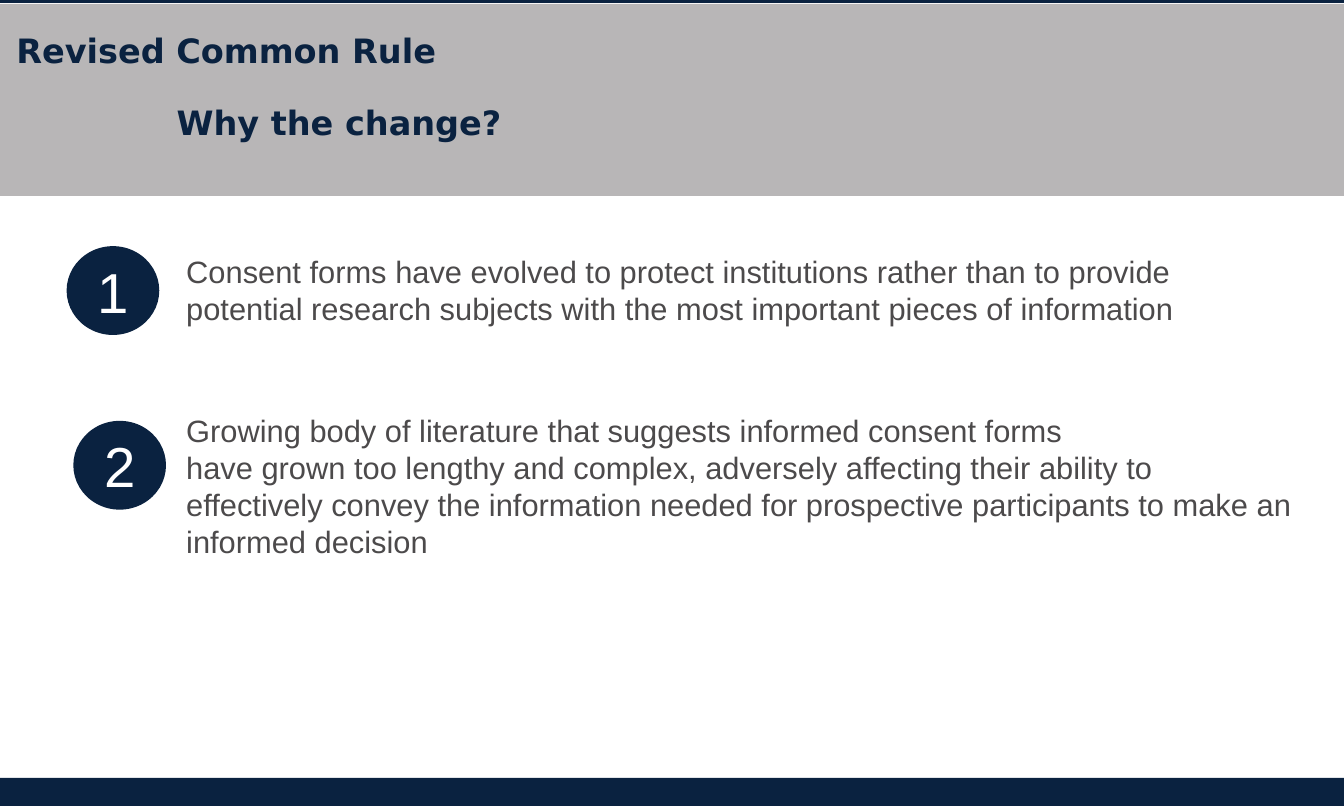
from dataclasses import dataclass

from pptx import Presentation
from pptx.dml.color import RGBColor
from pptx.enum.shapes import MSO_SHAPE
from pptx.enum.text import MSO_ANCHOR, MSO_AUTO_SIZE, PP_ALIGN
from pptx.util import Inches, Pt


@dataclass(frozen=True)
class Theme:
    navy: str = "0A2240"
    grey: str = "B8B6B7"
    ink: str = "4C4A4B"
    white: str = "FFFFFF"
    heading_font: str = "DejaVu Sans"
    body_font: str = "Arial"
    heading_size: int = 25
    number_size: int = 42
    body_size: int = 23


THEME = Theme()
PAGE_WIDTH, PAGE_HEIGHT = 13.92, 8.35
TEXT_LEFT = 1.83
HEADING = {"name": THEME.heading_font, "size": Pt(THEME.heading_size), "bold": True}
NUMBER = {"name": THEME.body_font, "size": Pt(THEME.number_size)}
BODY = {"name": THEME.body_font, "size": Pt(THEME.body_size)}

# Number, badge position, text top and height, paragraphs
REASONS = [
    ("1", (0.69, 2.55), (2.57, 0.88), [
        "Consent forms have evolved to protect institutions rather than to provide "
        "potential research subjects with the most important pieces of information",
    ]),
    ("2", (0.76, 4.36), (4.22, 1.65), [
        "Growing body of literature that suggests informed consent forms",
        "have grown too lengthy and complex, adversely affecting their ability to "
        "effectively convey the information needed for prospective participants "
        "to make an informed decision",
    ]),
]


def write(shape, lines, font_format, color, align=PP_ALIGN.LEFT):
    frame = shape.text_frame
    frame.word_wrap = True
    frame.text = "\n".join(lines)
    for para in frame.paragraphs:
        para.alignment = align
        para.font.color.rgb = RGBColor.from_string(color)
        for name, value in font_format.items():
            setattr(para.font, name, value)


def add_filled(page, kind, left, top, width, height, color):
    shape = page.shapes.add_shape(
        kind, Inches(left), Inches(top), Inches(width), Inches(height))
    shape.shadow.inherit = False
    shape.fill.solid()
    shape.fill.fore_color.rgb = RGBColor.from_string(color)
    shape.line.fill.background()
    return shape


def format_heading(box, left, top, text):
    """Place a box as a heading line without insets."""
    place = {"left": left, "top": top, "width": 11.89, "height": 0.42}
    for name, value in place.items():
        setattr(box, name, Inches(value))
    write(box, [text], HEADING, THEME.navy)
    frame = box.text_frame
    frame.vertical_anchor = MSO_ANCHOR.TOP
    frame.auto_size = MSO_AUTO_SIZE.SHAPE_TO_FIT_TEXT
    for side in ("left", "top", "right", "bottom"):
        setattr(frame, f"margin_{side}", 0)


def add_reason(page, number, badge_place, text_span, lines):
    badge = add_filled(page, MSO_SHAPE.OVAL, *badge_place, 0.96, 0.92, THEME.navy)
    write(badge, [number], NUMBER, THEME.white, PP_ALIGN.CENTER)
    badge.text_frame.vertical_anchor = MSO_ANCHOR.MIDDLE
    top, height = text_span
    box = page.shapes.add_textbox(
        Inches(TEXT_LEFT), Inches(top), Inches(11.69), Inches(height))
    write(box, lines, BODY, THEME.ink)
    box.text_frame.auto_size = MSO_AUTO_SIZE.SHAPE_TO_FIT_TEXT


def main():
    deck = Presentation()
    deck.slide_width, deck.slide_height = Inches(PAGE_WIDTH), Inches(PAGE_HEIGHT)
    page = deck.slides.add_slide(deck.slide_layouts[5])

    bands = [(0, 0.03, THEME.navy), (0.04, 1.99, THEME.grey), (8.06, 0.29, THEME.navy)]
    for top, height, color in bands:
        add_filled(page, MSO_SHAPE.RECTANGLE, 0, top, PAGE_WIDTH, height, color)

    title = page.shapes.title
    page.shapes._spTree.append(title._element)  # in front of the grey band
    format_heading(title, 0.17, 0.31, "Revised Common Rule")
    subtitle = page.shapes.add_textbox(0, 0, 0, 0)
    format_heading(subtitle, TEXT_LEFT, 1.06, "Why the change?")

    for reason in REASONS:
        add_reason(page, *reason)
    deck.save("out.pptx")


if __name__ == "__main__":
    main()
